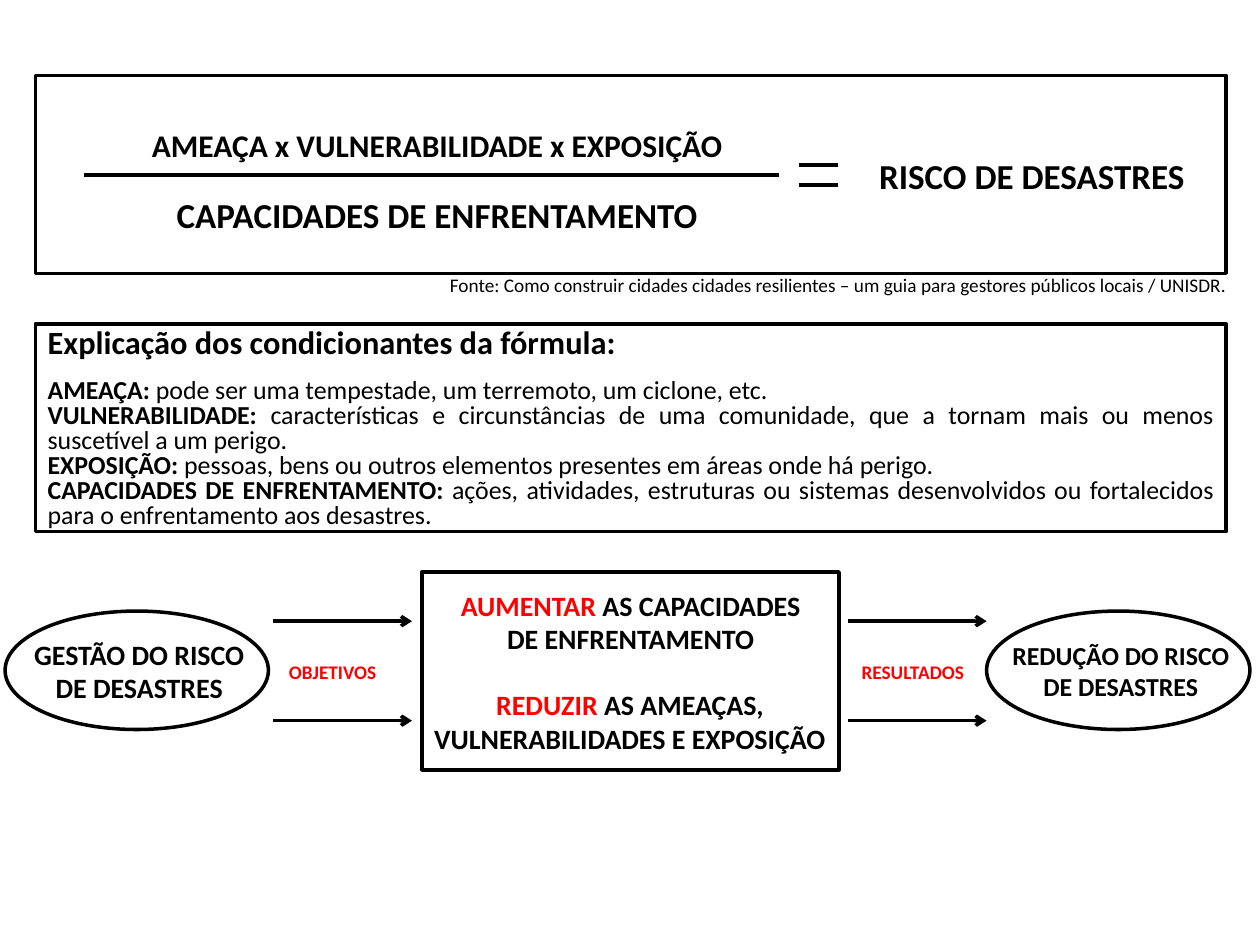
from lxml.etree import SubElement
from pptx import Presentation
from pptx.dml.color import RGBColor as RGB
from pptx.enum.shapes import MSO_CONNECTOR as Link, MSO_SHAPE as Shape
from pptx.enum.text import MSO_ANCHOR as Anchor, PP_ALIGN as Align
from pptx.oxml.ns import qn
from pptx.util import Inches, Pt

HUES = {"ink": "000000", "paper": "FFFFFF", "accent": "FF0000"}


class Board:
    def __init__(self, slide, font="Calibri", weight=2):
        self.slide = slide
        self.font = font
        self.weight = weight

    def hue(self, name):
        return RGB.from_string(HUES[name])

    def stroke(self, line):
        line.color.rgb = self.hue("ink")
        line.width = Pt(self.weight)

    def panel(self, kind, *area):
        shape = self.slide.shapes.add_shape(kind, *map(Inches, area))
        shape.shadow.inherit = False
        shape.fill.solid()
        shape.fill.fore_color.rgb = self.hue("paper")
        self.stroke(shape.line)

    def rule(self, left, right, top, arrow=False):
        ends = map(Inches, (left, top, right, top))
        link = self.slide.shapes.add_connector(Link.STRAIGHT, *ends)
        self.stroke(link.line)
        props = link._element.spPr
        if arrow:
            SubElement(props.find(qn("a:ln")), qn("a:tailEnd"), type="arrow")
        SubElement(props, qn("a:effectLst"))

    def frame(self, area, anchor):
        frame = self.slide.shapes.add_textbox(*map(Inches, area)).text_frame
        frame.word_wrap = True
        frame.vertical_anchor = anchor
        return frame

    def style(self, para, size, align):
        para.alignment = align
        para.font.name = self.font
        para.font.size = Pt(size)

    def label(self, area, text, size, hue="ink", bold=True, lead=""):
        para = self.frame(area, Anchor.MIDDLE).paragraphs[0]
        self.style(para, size, Align.CENTER)
        para.font.bold = bold
        if lead:
            run = para.add_run()
            run.text = lead
            run.font.color.rgb = self.hue("accent")
        run = para.add_run()
        run.text = text
        run.font.color.rgb = self.hue(hue)

    def terms(self, area, title, items):
        frame = self.frame(area, Anchor.TOP)
        head = frame.paragraphs[0]
        head.text = title
        self.style(head, 18.5, Align.JUSTIFY)
        head.font.bold = True
        head.space_after = Pt(10.8)
        for term, text in items:
            para = frame.add_paragraph()
            self.style(para, 14.8, Align.JUSTIFY)
            run = para.add_run()
            run.text = term + ": "
            run.font.bold = True
            para.add_run().text = text
        for para in frame.paragraphs:
            para.line_spacing = 0.8
            para.font.color.rgb = self.hue("ink")


def main():
    deck = Presentation()
    deck.slide_width, deck.slide_height = Inches(10), Inches(7.5)
    board = Board(deck.slides.add_slide(deck.slide_layouts[6]))

    for left in (7.83, 0.04):
        board.panel(Shape.OVAL, left, 4.85, 2.09, 0.94)
    board.panel(Shape.RECTANGLE, 3.35, 4.54, 3.31, 1.57)
    board.panel(Shape.RECTANGLE, 0.28, 2.57, 9.45, 1.65)
    board.panel(Shape.RECTANGLE, 0.28, 0.6, 9.45, 1.57)

    board.label((0.91, 0.91, 5.12, 0.48),
                "AMEAÇA x VULNERABILIDADE x EXPOSIÇÃO", 18)
    board.rule(0.67, 6.18, 1.39)
    board.label((0.91, 1.46, 5.12, 0.48), "CAPACIDADES DE ENFRENTAMENTO", 20)
    for top in (1.31, 1.47):
        board.rule(6.34, 6.65, top)
    board.label((5.63, 1.15, 5.12, 0.48), "RISCO DE DESASTRES", 20)
    board.label((3.19, 2.02, 6.93, 0.48),
                "Fonte: Como construir cidades cidades resilientes – um guia "
                "para gestores públicos locais / UNISDR.", 11, bold=False)

    board.terms((0.28, 2.57, 9.45, 1.84),
                "Explicação dos condicionantes da fórmula:", [
        ("AMEAÇA", "pode ser uma tempestade, um terremoto, um ciclone, etc."),
        ("VULNERABILIDADE", "características e circunstâncias de uma "
         "comunidade, que a tornam mais ou menos suscetível a um perigo."),
        ("EXPOSIÇÃO", "pessoas, bens ou outros elementos presentes em áreas "
         "onde há perigo."),
        ("CAPACIDADES DE ENFRENTAMENTO", "ações, atividades, estruturas ou "
         "sistemas desenvolvidos ou fortalecidos para o enfrentamento aos "
         "desastres."),
    ])

    board.label((0.12, 4.93, 1.97, 0.79), "GESTÃO DO RISCO DE DESASTRES", 16)
    board.label((7.91, 4.93, 1.97, 0.79),
                "REDUÇÃO DO RISCO DE DESASTRES", 14.8)
    board.label((3.43, 4.54, 3.15, 0.79),
                " AS CAPACIDADES DE ENFRENTAMENTO", 16, lead="AUMENTAR")
    board.label((3.27, 5.33, 3.46, 0.79),
                " AS AMEAÇAS, VULNERABILIDADES E EXPOSIÇÃO", 16,
                lead="REDUZIR")
    board.label((2.09, 5.09, 1.1, 0.48), "OBJETIVOS", 11, "accent")
    board.label((6.42, 5.09, 1.65, 0.48), "RESULTADOS", 11, "accent")
    for left in (2.17, 6.73):
        for top in (4.93, 5.72):
            board.rule(left, left + 1.1, top, arrow=True)

    deck.save("out.pptx")


if __name__ == "__main__":
    main()
